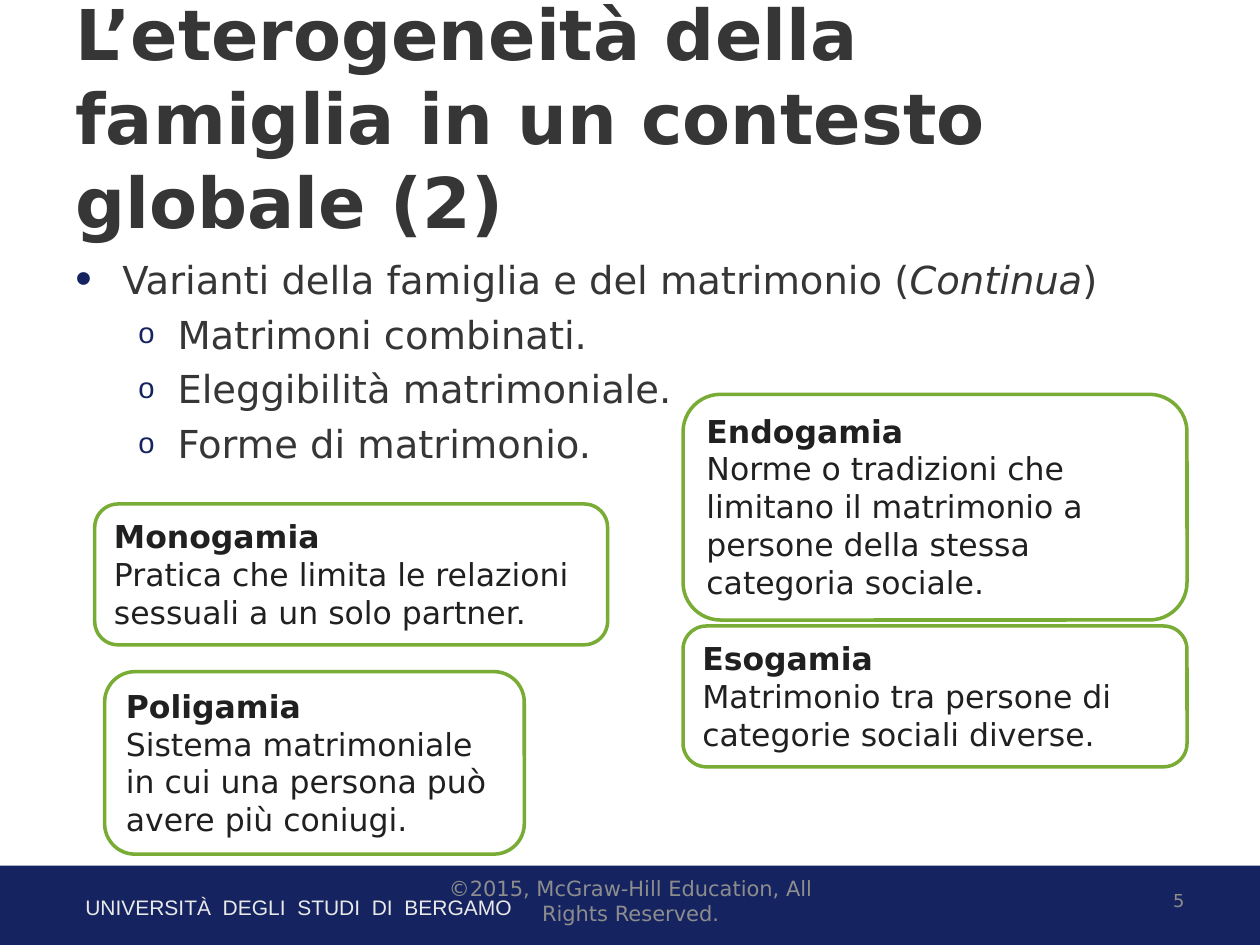
from dataclasses import dataclass

from lxml import etree
from pptx import Presentation
from pptx.dml.color import RGBColor
from pptx.enum.shapes import MSO_SHAPE
from pptx.enum.text import MSO_ANCHOR, MSO_AUTO_SIZE, PP_ALIGN
from pptx.oxml.ns import qn
from pptx.util import Cm, Pt

RECTANGLE, ROUNDED = MSO_SHAPE.RECTANGLE, MSO_SHAPE.ROUNDED_RECTANGLE
TOP, MIDDLE = MSO_ANCHOR.TOP, MSO_ANCHOR.MIDDLE
LEFT, CENTER, RIGHT = PP_ALIGN.LEFT, PP_ALIGN.CENTER, PP_ALIGN.RIGHT
NO_FIT, GROW = MSO_AUTO_SIZE.NONE, MSO_AUTO_SIZE.SHAPE_TO_FIT_TEXT
TITLE_ONLY = 5


@dataclass(frozen=True)
class Theme:
    navy: str = "152460"
    green: str = "78AC35"
    white: str = "FFFFFF"
    heading: str = "363636"
    body: str = "202020"
    muted: str = "8D8D8D"
    pale: str = "E9E9E9"
    font: str = "DejaVu Sans"
    footer_font: str = "Arial"
    title_size: float = 40
    list_size: float = 22
    card_size: float = 18
    footer_size: float = 12
    number_size: float = 10.2


THEME = Theme()

TITLE = "L’eterogeneità della famiglia in un contesto globale (2)"
TOPIC = [("Varianti della famiglia e del matrimonio (", False), ("Continua", True), (")", False)]
SUBTOPICS = ["Matrimoni combinati.", "Eleggibilità matrimoniale.", "Forme di matrimonio."]
CARDS = [
    ("Esogamia", "Matrimonio tra persone di categorie sociali diverse.",
     (13.77, 12.62, 10.16, 2.84)),
    ("Endogamia", "Norme o tradizioni che limitano il matrimonio a persone della stessa categoria sociale.",
     (13.77, 7.95, 10.16, 4.55)),
    ("Poligamia", "Sistema matrimoniale in cui una persona può avere più coniugi.",
     (2.11, 13.54, 8.46, 3.68)),
    ("Monogamia", "Pratica che limita le relazioni sessuali a un solo partner.",
     (1.91, 10.16, 10.34, 2.84)),
]


def color(code):
    return RGBColor.from_string(code)


def place(shape, area):
    shape.left, shape.top, shape.width, shape.height = (Cm(value) for value in area)


def write(para, text, size, ink, font=THEME.font, bold=False, italic=False, align=LEFT):
    para.alignment = align
    span = para.add_run()
    span.text = text
    span.font.name = font
    span.font.size = Pt(size)
    span.font.bold = bold
    span.font.italic = italic
    span.font.color.rgb = color(ink)


def set_frame(shape, anchor=TOP, fit=NO_FIT):
    frame = shape.text_frame
    frame.word_wrap = True
    frame.auto_size = fit
    frame.vertical_anchor = anchor
    return frame


def add_bullet(para, symbol, percent, margin, hanging):
    properties = para._p.get_or_add_pPr()
    properties.set("marL", str(Cm(margin)))
    properties.set("indent", str(-Cm(hanging)))
    tint = etree.SubElement(properties, qn("a:buClr"))
    etree.SubElement(tint, qn("a:srgbClr"), val=THEME.navy)
    etree.SubElement(properties, qn("a:buSzPct"), val=str(percent * 1000))
    etree.SubElement(properties, qn("a:buFont"), typeface=THEME.footer_font)
    etree.SubElement(properties, qn("a:buChar"), char=symbol)


def add_panel(page, kind, area, fill, line=None):
    box = page.shapes.add_shape(kind, *(Cm(value) for value in area))
    box.shadow.inherit = False
    box.fill.solid()
    box.fill.fore_color.rgb = color(fill)
    if line:
        box.line.color.rgb = color(line)
        box.line.width = Pt(2)
    else:
        box.line.fill.background()
    return box


def add_label(page, text, area, anchor=TOP, **style):
    box = page.shapes.add_textbox(*(Cm(value) for value in area))
    write(set_frame(box, anchor).paragraphs[0], text, **style)


def add_title(page):
    title = page.shapes.title
    place(title, (1.27, 0.76, 22.86, 3.18))
    frame = set_frame(title, MIDDLE)
    write(frame.paragraphs[0], TITLE, THEME.title_size, THEME.heading, bold=True)


def add_topics(page):
    box = page.shapes.add_textbox(Cm(1.27), Cm(5.03), Cm(22.86), Cm(11.99))
    frame = set_frame(box)
    topic = frame.paragraphs[0]
    add_bullet(topic, "•", 122, 0.95, 0.95)
    for text, italic in TOPIC:
        write(topic, text, THEME.list_size, THEME.heading, italic=italic)
    for text in SUBTOPICS:
        para = frame.add_paragraph()
        para.level = 1
        para.space_before = Pt(5)
        add_bullet(para, "o", 76, 2.06, 0.79)
        write(para, text, THEME.list_size, THEME.heading)


def add_card(page, term, meaning, area):
    card = add_panel(page, ROUNDED, area, THEME.white, THEME.green)
    frame = set_frame(card, fit=GROW)
    write(frame.paragraphs[0], term, THEME.card_size, THEME.body, bold=True)
    write(frame.add_paragraph(), meaning, THEME.card_size, THEME.body)


def add_footer(page):
    add_panel(page, RECTANGLE, (0, 17.45, 25.4, 1.6), THEME.navy)
    add_label(page, "UNIVERSITÀ  DEGLI  STUDI  DI  BERGAMO", (1.47, 17.91, 14.78, 0.76),
              size=THEME.footer_size, ink=THEME.pale, font=THEME.footer_font)
    add_label(page, "5", (18.21, 17.65, 5.92, 1.02), MIDDLE,
              size=THEME.number_size, ink=THEME.muted, align=RIGHT)
    add_label(page, "©2015, McGraw-Hill Education, All Rights Reserved.",
              (8.69, 17.65, 8.05, 1.02), MIDDLE,
              size=THEME.footer_size, ink=THEME.muted, align=CENTER)


def main():
    deck = Presentation()
    deck.slide_width, deck.slide_height = Cm(25.4), Cm(19.05)
    page = deck.slides.add_slide(deck.slide_layouts[TITLE_ONLY])
    add_title(page)
    add_footer(page)
    add_topics(page)
    for term, meaning, area in CARDS:
        add_card(page, term, meaning, area)
    deck.save("out.pptx")


if __name__ == "__main__":
    main()
